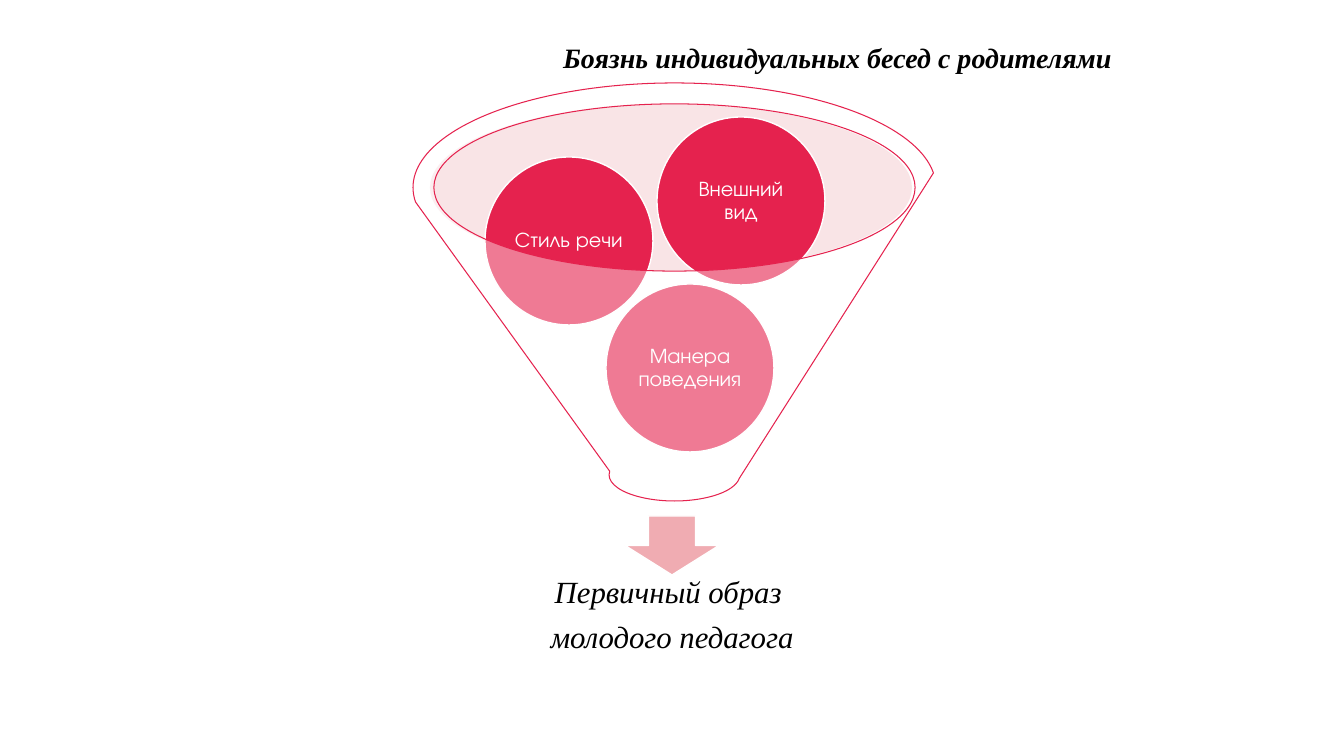
from lxml import etree
from pptx import Presentation
from pptx.dml.color import RGBColor
from pptx.enum import shapes, text
from pptx.oxml.ns import qn
from pptx import util as u

BLACK = RGBColor(0x00, 0x00, 0x00)
WHITE = RGBColor(0xFF, 0xFF, 0xFF)
CRIMSON = RGBColor(0xE5, 0x22, 0x4E)
ROSE = RGBColor(0xF0, 0xAC, 0xB2)
BLUSH = RGBColor(0xF2, 0xBD, 0xC2)

SERIF = "Times New Roman"
SANS = "TeX Gyre Adventor"
SHAPE = shapes.MSO_SHAPE
CIRCLE_SIZE = 168


def px(count):
    return u.Emu(round(count * 914400 / 100.8))


class FunnelSlide:
    def __init__(self, deck):
        self.page = deck.slides.add_slide(deck.slide_layouts[5])

    def title(self, wording, left, top, width, height):
        box = self.page.shapes.title
        box.left, box.top, box.width, box.height = map(px, (left, top, width, height))
        frame = box.text_frame
        self.set_text(frame, [wording], SERIF, 20, BLACK, italic=True, bold=True)
        frame.auto_size = text.MSO_AUTO_SIZE.NONE
        frame.vertical_anchor = text.MSO_ANCHOR.TOP
        frame.paragraphs[0].alignment = text.PP_ALIGN.LEFT

    def shape(self, kind, left, top, width, height, fill, line=None, weight=1, opacity=100):
        shape = self.page.shapes.add_shape(kind, *map(px, (left, top, width, height)))
        shape.shadow.inherit = False
        shape.fill.solid()
        shape.fill.fore_color.rgb = fill
        if opacity < 100:
            color = shape._element.spPr.find(qn("a:solidFill"))[0]
            etree.SubElement(color, qn("a:alpha")).set("val", str(opacity * 1000))
        if line is None:
            shape.line.fill.background()
        else:
            shape.line.color.rgb = line
            shape.line.width = u.Pt(weight)
        return shape

    def circle(self, wording, left, top):
        ball = self.shape(SHAPE.OVAL, left, top, CIRCLE_SIZE, CIRCLE_SIZE, CRIMSON, WHITE)
        self.center(ball.text_frame, [wording], 2, SANS, 15, WHITE)

    def caption(self, lines, left, top, width, height):
        box = self.page.shapes.add_textbox(*map(px, (left, top, width, height)))
        self.center(box.text_frame, lines, 17, SERIF, 22, BLACK, italic=True)

    def center(self, frame, lines, inset, font, size, color, italic=False):
        self.set_text(frame, lines, font, size, color, italic)
        frame.vertical_anchor = text.MSO_ANCHOR.MIDDLE
        frame.margin_left = frame.margin_right = px(inset)
        frame.margin_top = frame.margin_bottom = px(inset)
        for para in frame.paragraphs:
            para.alignment = text.PP_ALIGN.CENTER
            para.line_spacing = 0.9
        for para in frame.paragraphs[:-1]:
            para.space_after = u.Pt(8.5)

    def set_text(self, frame, lines, font, size, color, italic=False, bold=False):
        frame.text = "\n".join(lines)
        frame.word_wrap = True
        for para in frame.paragraphs:
            for span in para.runs:
                span.font.name = font
                span.font.size = u.Pt(size)
                span.font.color.rgb = color
                span.font.italic = italic
                span.font.bold = bold


def main():
    deck = Presentation()
    deck.slide_width, deck.slide_height = px(1344), px(756)
    slide = FunnelSlide(deck)

    # Heading
    slide.title("Боязнь индивидуальных бесед с родителями", 553, 35, 579, 44)

    # Funnel mouth, arrow and result
    slide.shape(SHAPE.OVAL, 430, 104, 482, 167, BLUSH, opacity=40)
    slide.shape(SHAPE.DOWN_ARROW, 625, 516, 94, 59, ROSE, WHITE)
    slide.caption(["Первичный образ ", "молодого педагога"], 448, 560, 448, 112)

    # Ingredients
    for wording, left, top in (
        ("Манера поведения", 606, 284),
        ("Стиль речи", 485, 157),
        ("Внешний вид", 657, 117),
    ):
        slide.circle(wording, left, top)

    # Translucent funnel in front
    slide.shape(SHAPE.FUNNEL, 413, 83, 523, 418, WHITE, CRIMSON, 0.75, opacity=40)

    deck.save("out.pptx")


if __name__ == "__main__":
    main()
